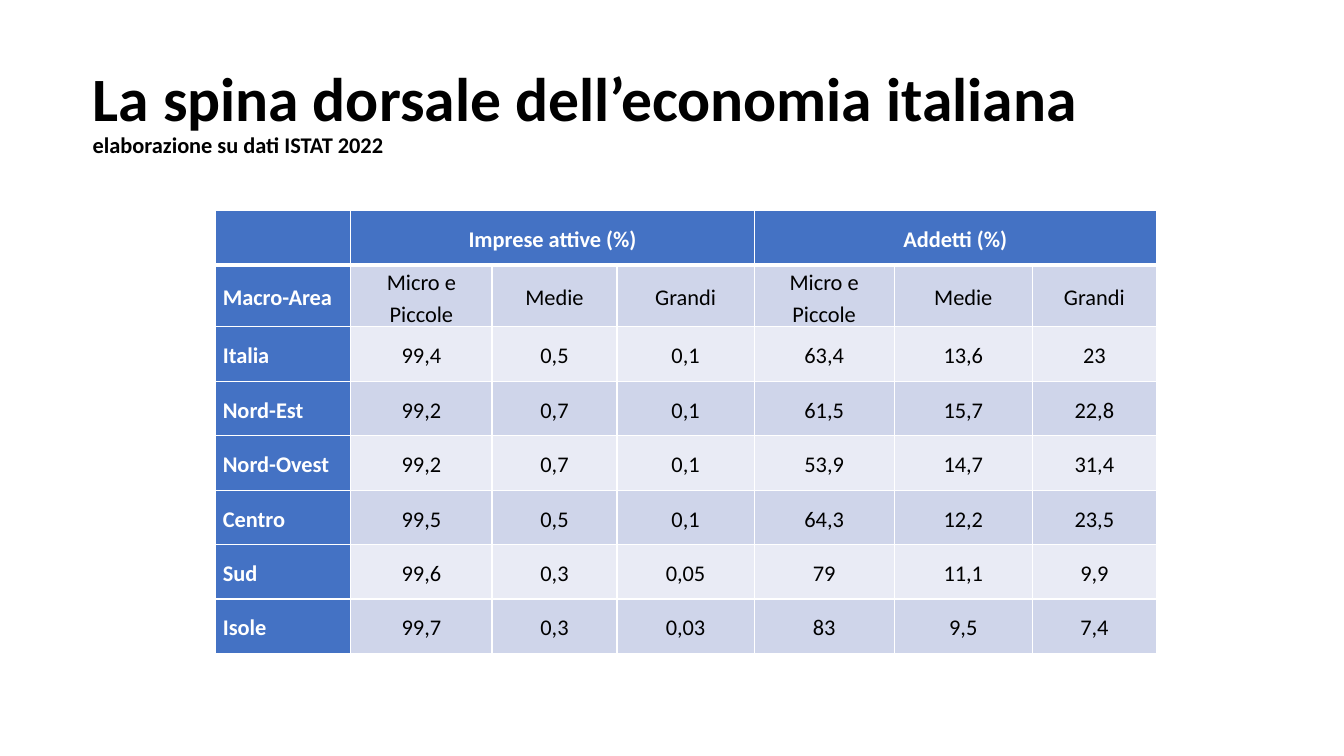
from lxml import etree
from pptx import Presentation
from pptx.dml.color import RGBColor as Rgb
from pptx.enum.text import MSO_ANCHOR as Anchor, PP_ALIGN as Align
from pptx.oxml.ns import qn
from pptx.util import Inches, Pt

COLORS = {"ink": "000000", "white": "FFFFFF", "blue": "4472C4",
          "dark": "CFD5EA", "light": "E9EBF5"}
WIDTHS = [1.34, 1.4, 1.24, 1.36, 1.39, 1.37, 1.23]
SIZES = ["Micro e Piccole", "Medie", "Grandi"]
ROWS = [
    ["", "Imprese attive (%)", "", "", "Addetti (%)", "", ""],
    ["Macro-Area"] + SIZES * 2,
    ["Italia", "99,4", "0,5", "0,1", "63,4", "13,6", "23"],
    ["Nord-Est", "99,2", "0,7", "0,1", "61,5", "15,7", "22,8"],
    ["Nord-Ovest", "99,2", "0,7", "0,1", "53,9", "14,7", "31,4"],
    ["Centro", "99,5", "0,5", "0,1", "64,3", "12,2", "23,5"],
    ["Sud", "99,6", "0,3", "0,05", "79", "11,1", "9,9"],
    ["Isole", "99,7", "0,3", "0,03", "83", "9,5", "7,4"],
]


class Deck:
    face = "Calibri"
    size = 16

    def __init__(self):
        self.prs = Presentation()
        self.prs.slide_width = Inches(13.33)
        self.prs.slide_height = Inches(7.5)
        self.slide = self.prs.slides.add_slide(self.prs.slide_layouts[6])

    def style(self, para, color, bold, space):
        para.line_spacing = space
        font = para.font
        font.name, font.size, font.bold = self.face, Pt(self.size), bold
        font.color.rgb = Rgb.from_string(COLORS[color])

    def title(self, head, note, *area):
        frame = self.slide.shapes.add_textbox(*map(Inches, area)).text_frame
        frame.word_wrap = True
        frame.vertical_anchor = Anchor.MIDDLE
        frame.margin_left = frame.margin_right = 0
        frame.margin_top = frame.margin_bottom = 0
        para = frame.paragraphs[0]
        self.style(para, "ink", True, 0.9)
        run = para.add_run()
        run.text = head
        run.font.size = Pt(44)
        para.add_line_break()
        para.add_run().text = note

    def border(self, cell, top, base):
        props = cell._tc.get_or_add_tcPr()
        for i, (side, width) in enumerate(zip("LRTB", (1, 1, top, base))):
            line = etree.Element(qn(f"a:ln{side}"), w=str(Pt(width)))
            fill = etree.SubElement(line, qn("a:solidFill"))
            etree.SubElement(fill, qn("a:srgbClr"), val=COLORS["white"])
            props.insert(i, line)

    def cell(self, cell, text, row, col):
        head = row == 0 or col == 0
        fill = "blue" if head else "dark" if row % 2 else "light"
        cell.fill.solid()
        cell.fill.fore_color.rgb = Rgb.from_string(COLORS[fill])
        cell.vertical_anchor = Anchor.MIDDLE
        cell.margin_left = cell.margin_right = Inches(0.07)
        cell.margin_top = cell.margin_bottom = 0
        cell.text = text
        para = cell.text_frame.paragraphs[0]
        para.alignment = Align.CENTER if col else Align.LEFT
        self.style(para, "white" if head else "ink", head, 1.15)
        self.border(cell, 3 if row == 1 else 1, 3 if row == 0 else 1)

    def table(self, rows, widths, left, top, high):
        shape = self.slide.shapes.add_table(
            len(rows), len(widths), Inches(left), Inches(top),
            Inches(sum(widths)), Inches(high))
        table = shape.table
        for col, width in zip(table.columns, widths):
            col.width = Inches(width)
        for r, row in enumerate(rows):
            table.rows[r].height = Inches(0.59 if r == 1 else 0.54)
            for c, text in enumerate(row):
                self.cell(table.cell(r, c), text, r, c)
        for c in (1, 4):
            table.cell(0, c).merge(table.cell(0, c + 2))


def main():
    deck = Deck()
    deck.title("La spina dorsale dell’economia italiana",
               "elaborazione su dati ISTAT 2022", 0.92, 0.4, 11.5, 1.45)
    deck.table(ROWS, WIDTHS, 2.14, 2.09, 4.37)
    deck.prs.save("out.pptx")


if __name__ == "__main__":
    main()
